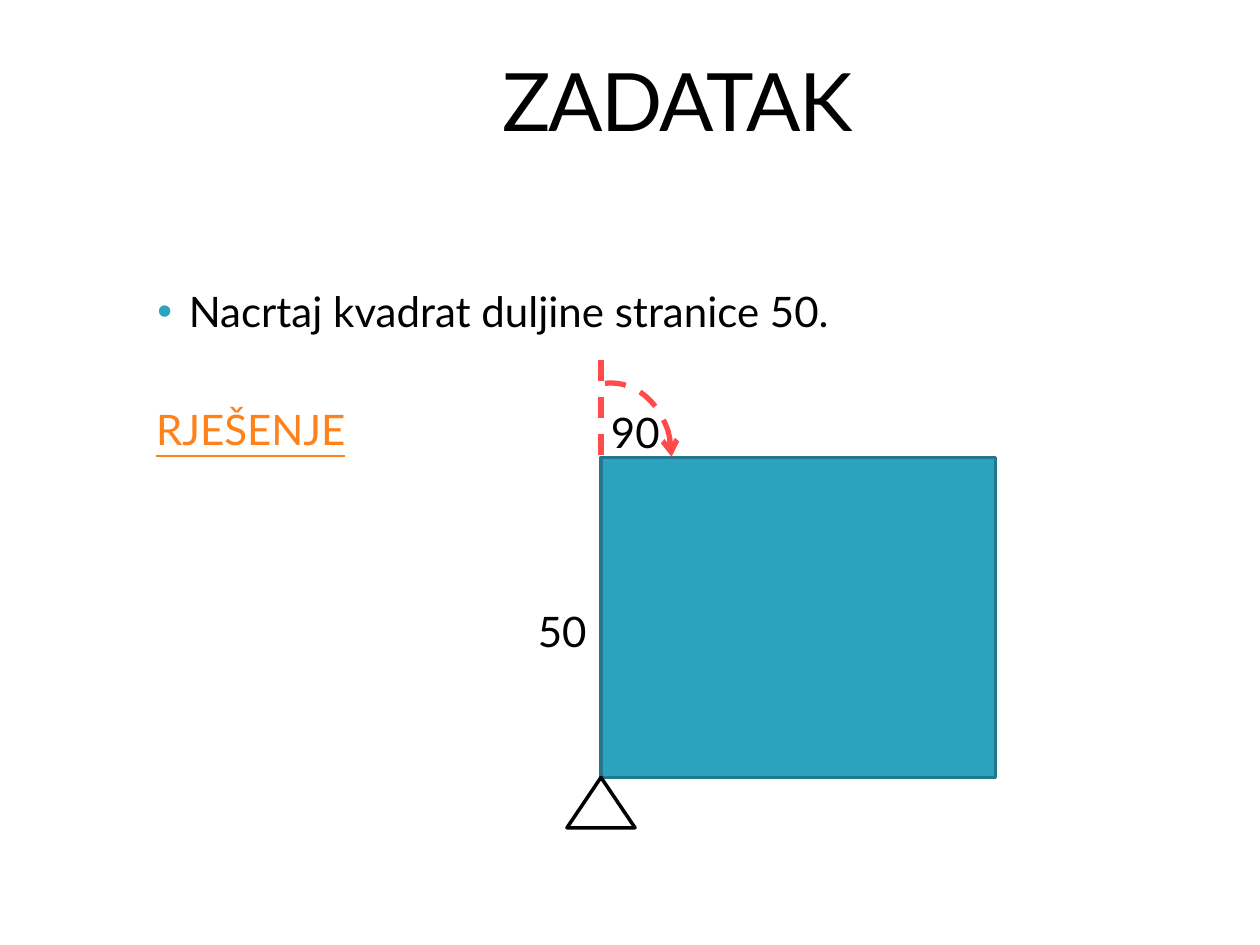
from dataclasses import dataclass

from lxml import etree
from pptx import Presentation
from pptx.dml.color import RGBColor
from pptx.enum.dml import MSO_LINE
from pptx.enum.shapes import MSO_CONNECTOR, MSO_SHAPE
from pptx.enum.text import MSO_ANCHOR, PP_ALIGN
from pptx.oxml.ns import qn
from pptx.util import Inches, Pt

RECT, TRIANGLE, ARC = MSO_SHAPE.RECTANGLE, MSO_SHAPE.ISOSCELES_TRIANGLE, MSO_SHAPE.ARC
STRAIGHT = MSO_CONNECTOR.STRAIGHT
DASH = MSO_LINE.DASH
MIDDLE, TOP = MSO_ANCHOR.MIDDLE, MSO_ANCHOR.TOP
CENTER, LEFT = PP_ALIGN.CENTER, PP_ALIGN.LEFT


@dataclass(frozen=True)
class Theme:
    font: str = "Lato"
    title_size: int = 46
    text_size: int = 24
    ink: str = "000000"
    square: str = "2DA2BF"
    square_edge: str = "21788D"
    turn: str = "FF4B4B"
    answer: str = "FF8119"
    edge_width: int = 2
    turn_width: int = 3


class SlideBuilder:
    def __init__(self, slide, theme):
        self.slide = slide
        self.theme = theme

    def run(self, p, text, size=None, color=None, underline=None):
        r = p.add_run()
        r.text = text
        r.font.name = self.theme.font
        r.font.size = Pt(size or self.theme.text_size)
        r.font.color.rgb = RGBColor.from_string(color or self.theme.ink)
        r.font.underline = underline
        return r

    def title(self, text, x, y, w, h):
        sp = self.slide.shapes.title
        sp.left, sp.top, sp.width, sp.height = map(Inches, (x, y, w, h))
        tf = sp.text_frame
        tf.vertical_anchor = MIDDLE
        p = tf.paragraphs[0]
        p.alignment = CENTER
        r = self.run(p, text, self.theme.title_size)
        r.font._element.set("spc", "-100")

    def text_box(self, x, y, w, h, wrap=True):
        sp = self.slide.shapes.add_textbox(*map(Inches, (x, y, w, h)))
        tf = sp.text_frame
        tf.word_wrap = wrap
        tf.vertical_anchor = TOP
        tf.paragraphs[0].alignment = LEFT
        return tf

    def label(self, text, x, y, w, h):
        tf = self.text_box(x, y, w, h, wrap=False)
        self.run(tf.paragraphs[0], text)

    def indent(self, p, margin, first=0):
        ppr = p._p.get_or_add_pPr()
        ppr.set("marL", str(Inches(margin)))
        ppr.set("indent", str(Inches(first)))
        return ppr

    def bullet(self, p, color):
        ppr = self.indent(p, 0.38, -0.25)
        clr = etree.SubElement(ppr, qn("a:buClr"))
        etree.SubElement(clr, qn("a:srgbClr"), val=color)
        etree.SubElement(ppr, qn("a:buFont"), typeface="Arial")
        etree.SubElement(ppr, qn("a:buChar"), char="•")

    def outline(self, line, color, width, dash=None):
        line.color.rgb = RGBColor.from_string(color)
        line.width = Pt(width)
        if dash:
            line.dash_style = dash

    def shape(self, kind, x, y, w, h, color, width, fill=None, dash=None):
        sp = self.slide.shapes.add_shape(kind, *map(Inches, (x, y, w, h)))
        sp.shadow.inherit = False
        if fill:
            sp.fill.solid()
            sp.fill.fore_color.rgb = RGBColor.from_string(fill)
        else:
            sp.fill.background()
        self.outline(sp.line, color, width, dash)
        return sp

    def arc_arrow(self, x, y, w, h, start, end):
        sp = self.shape(ARC, x, y, w, h, self.theme.turn, self.theme.turn_width, dash=DASH)
        sp.adjustments[0], sp.adjustments[1] = start, end
        etree.SubElement(sp.line._get_or_add_ln(), qn("a:tailEnd"), type="arrow")

    def dashed_line(self, x1, y1, x2, y2):
        cx = self.slide.shapes.add_connector(STRAIGHT, *map(Inches, (x1, y1, x2, y2)))
        self.outline(cx.line, self.theme.turn, self.theme.turn_width, DASH)
        etree.SubElement(cx._element.spPr, qn("a:effectLst"))


def main():
    prs = Presentation()
    prs.slide_width, prs.slide_height = Inches(10), Inches(7.5)
    theme = Theme()
    s = SlideBuilder(prs.slides.add_slide(prs.slide_layouts[5]), theme)

    s.title("ZADATAK", 0.99, 0.36, 8.77, 0.86)

    tf = s.text_box(1.02, 2.22, 8.74, 4.83)
    task = tf.paragraphs[0]
    s.bullet(task, theme.square)
    s.run(task, "Nacrtaj kvadrat duljine stranice 50.")
    answer = tf.add_paragraph()
    answer.space_before = Pt(38.4)
    s.indent(answer, 0.12)
    s.run(answer, "RJEŠENJE", color=theme.answer, underline=True)

    x, y, w, h = 4.77, 3.63, 3.13, 2.54
    turtle_w, turtle_h = 0.54, 0.4
    s.shape(RECT, x, y, w, h, theme.square_edge, theme.edge_width, fill=theme.square)
    s.shape(TRIANGLE, x - turtle_w / 2, y + h, turtle_w, turtle_h, theme.ink, theme.edge_width)
    s.label("50", 4.17, 4.76, 0.88, 0.5)
    s.dashed_line(x, 2.86, x, y)
    s.label("90", 4.75, 3.18, 0.59, 0.5)
    s.arc_arrow(4.37, 3.04, 0.96, 1.17, 159.17, 0)

    prs.save("out.pptx")


if __name__ == "__main__":
    main()
